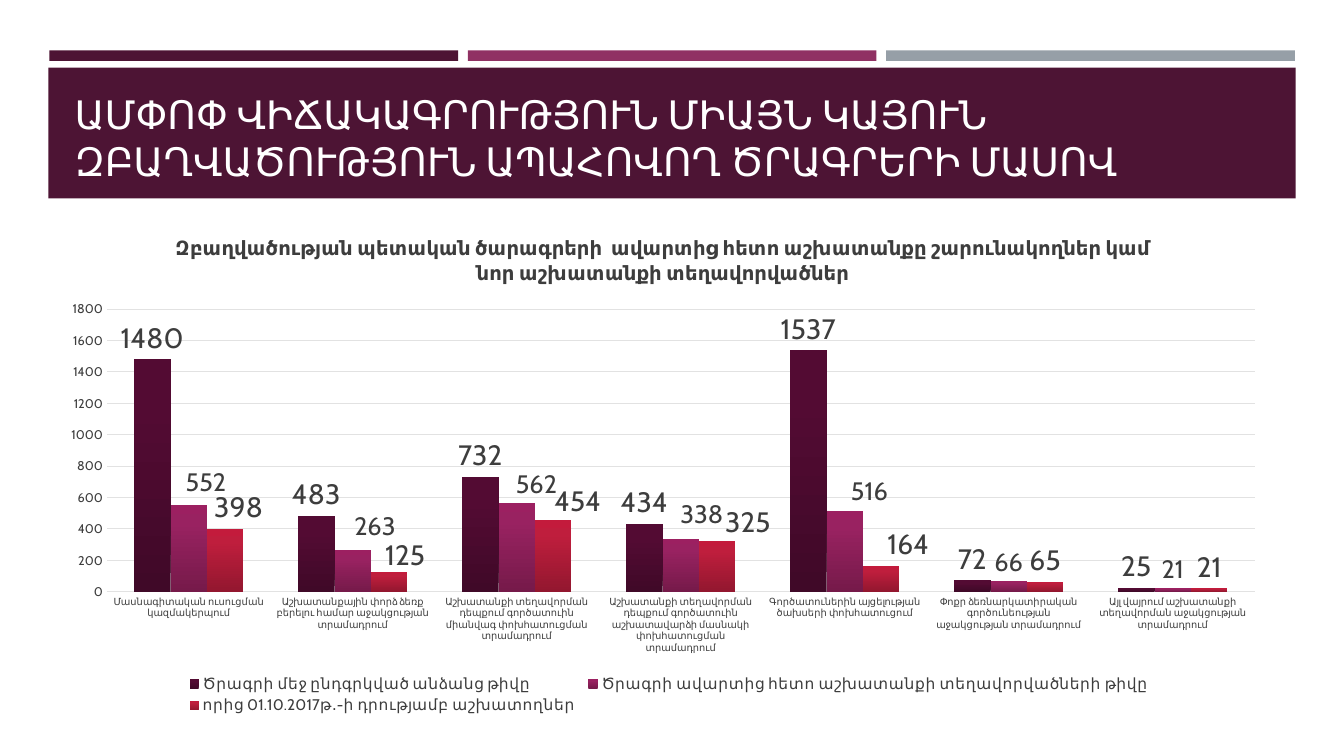
import lxml.etree
import pptx
import pptx.chart.data
import pptx.dml.color
import pptx.enum.chart
import pptx.enum.shapes
import pptx.enum.text
import pptx.oxml.ns
import pptx.util

qn = pptx.oxml.ns.qn
Pt = pptx.util.Pt

COLORS = {
    "plum": "4D1434", "magenta": "903163", "grey": "969FA7",
    "white": "FFFFFF", "text": "3D3D3D", "grid": "E2E2E2",
}
FONT = "Cabin"

TITLE = "ԱՄՓՈՓ ՎԻՃԱԿԱԳՐՈՒԹՅՈՒՆ ՄԻԱՅՆ ԿԱՅՈՒՆ ԶԲԱՂՎԱԾՈՒԹՅՈՒՆ ԱՊԱՀՈՎՈՂ ԾՐԱԳՐԵՐԻ ՄԱՍՈՎ"
CHART_TITLE = ("Զբաղվածության պետական ծարագրերի  ավարտից հետո աշխատանքը "
               "շարունակողներ կամ նոր աշխատանքի տեղավորվածներ")
PROGRAMS = [
    "Մասնագիտական ուսուցման կազմակերպում",
    "Աշխատանքային փորձ ձեռք բերելու համար աջակցության տրամադրում",
    "Աշխատանքի տեղավորման դեպքում գործատուին միանվագ փոխհատուցման տրամադրում",
    "Աշխատանքի տեղավորման դեպքում գործատուին աշխատավարձի մասնակի փոխհատուցման տրամադրում",
    "Գործատուներին այցելության ծախսերի փոխհատուցում",
    "Փոքր ձեռնարկատիրական գործունեության աջակցության տրամադրում",
    "Այլ վայրում աշխատանքի տեղավորման աջակցության տրամադրում",
]
# Label shifts are (x, y) in percent of the chart, one per leading program.
SERIES = [
    {"name": "Ծրագրի մեջ ընդգրկված անձանց թիվը",
     "values": [1480, 483, 732, 434, 1537, 72, 25],
     "gradient": ["400928", "530B33", "550A34"], "label_size": 20, "shifts": []},
    {"name": "Ծրագրի ավարտից հետո աշխատանքի տեղավորվածների թիվը",
     "values": [552, 263, 562, 338, 516, 66, 21],
     "gradient": ["761A4A", "992261", "9C2061"], "label_size": 18,
     "shifts": [(1.4, -0.6), (1.8, -1), (1.6, 0), (1.7, -1), (2, 0)]},
    {"name": "որից 01.10.2017թ․-ի դրությամբ աշխատողներ",
     "values": [398, 125, 454, 325, 164, 65, 21],
     "gradient": ["93172F", "BF1E3D", "C31B3C"], "label_size": 20,
     "shifts": [(1.1, 0), (1.3, 1), (2, 0.4), (2.5, 0.6), (2.2, 0)]},
]


def rgb(name):
    return pptx.dml.color.RGBColor.from_string(COLORS[name])


def make_layout(**settings):
    """Return a c:layout element; numbers are percent of the chart."""
    layout = lxml.etree.Element(qn("c:layout"))
    manual = lxml.etree.SubElement(layout, qn("c:manualLayout"))
    for tag, value in settings.items():
        text = value if isinstance(value, str) else f"{value / 100:.3f}"
        lxml.etree.SubElement(manual, qn(f"c:{tag}")).set("val", text)
    return layout


def place(element, after, **settings):
    """Give a chart part a manual layout, right after the named child (or first)."""
    for old in element.findall(qn("c:layout")):
        element.remove(old)
    position = 0 if after is None else element.index(element.find(qn(after))) + 1
    element.insert(position, make_layout(**settings))


class SlideBuilder:
    """Boxes are (left, top, width, height) in percent of the slide's size."""

    def __init__(self, presentation):
        self.presentation = presentation
        self.slide = presentation.slides.add_slide(presentation.slide_layouts[5])

    def box(self, left, top, width, height):
        full_width = self.presentation.slide_width
        full_height = self.presentation.slide_height
        return [int(full * share / 100) for full, share in
                zip((full_width, full_height) * 2, (left, top, width, height))]

    def style(self, font, size, color="text", bold=False):
        font.name, font.size, font.bold = FONT, Pt(size), bold
        font.color.rgb = rgb(color)

    def bar(self, box, color):
        shape = self.slide.shapes.add_shape(
            pptx.enum.shapes.MSO_SHAPE.RECTANGLE, *self.box(*box))
        shape.shadow.inherit = False
        shape.fill.solid()
        shape.fill.fore_color.rgb = rgb(color)
        shape.line.fill.background()

    def title(self, box, text):
        title = self.slide.shapes.title
        title.left, title.top, title.width, title.height = self.box(*box)
        frame = title.text_frame
        frame.text = text
        frame.word_wrap = True
        frame.auto_size = pptx.enum.text.MSO_AUTO_SIZE.NONE
        frame.vertical_anchor = pptx.enum.text.MSO_ANCHOR.BOTTOM
        paragraph = frame.paragraphs[0]
        paragraph.alignment = pptx.enum.text.PP_ALIGN.LEFT
        self.style(paragraph.font, 28, "white")
        self.slide.shapes._spTree.append(title._element)  # in front of the band

    def column_chart(self, box):
        data = pptx.chart.data.CategoryChartData()
        data.categories = PROGRAMS
        for entry in SERIES:
            data.add_series(entry["name"], entry["values"])
        chart = self.slide.shapes.add_chart(
            pptx.enum.chart.XL_CHART_TYPE.COLUMN_CLUSTERED, *self.box(*box), data).chart
        self.style(chart.font, 10)
        chart.has_title = True
        chart.chart_title.text_frame.text = CHART_TITLE
        self.style(chart.chart_title.text_frame.paragraphs[0].font, 14, bold=True)
        chart.chart_title.include_in_layout = False

        chart.has_legend = True
        chart.legend.position = pptx.enum.chart.XL_LEGEND_POSITION.BOTTOM
        chart.legend.include_in_layout = False
        self.style(chart.legend.font, 11)
        place(chart.legend._element, "c:legendPos", xMode="edge", yMode="edge",
              x=11, y=90.3, w=79, h=9.2)

        self.axes(chart)
        plot = chart.plots[0]
        plot.gap_width, plot.overlap, plot.vary_by_categories = 150, 0, False
        for series, entry in zip(plot.series, SERIES):
            self.series(series, entry)
        plot_area = chart._chartSpace.find(".//" + qn("c:plotArea"))
        place(plot_area, None, layoutTarget="inner", xMode="edge", yMode="edge",
              x=4.9, y=18.5, w=93.1, h=56)

    def axes(self, chart):
        for axis, size in ((chart.category_axis, 7), (chart.value_axis, 9)):
            axis.major_tick_mark = pptx.enum.chart.XL_TICK_MARK.NONE
            axis.minor_tick_mark = pptx.enum.chart.XL_TICK_MARK.NONE
            self.style(axis.tick_labels.font, size)
        value_axis = chart.value_axis
        value_axis.minimum_scale, value_axis.maximum_scale = 0, 1800
        value_axis.major_unit = 200
        value_axis.format.line.fill.background()
        for line in (chart.category_axis.format.line,
                     value_axis.major_gridlines.format.line):
            line.color.rgb = rgb("grid")
            line.width = Pt(0.75)

    def series(self, series, entry):
        series.smooth = False if hasattr(series, "smooth") else None
        fill = series.format.fill
        fill.gradient()
        fill.gradient_angle = 90
        stops = next(series._element.iter(qn("a:gsLst")))
        stops.clear()
        for position, color in zip((0, 80, 100), entry["gradient"]):
            stop = lxml.etree.SubElement(stops, qn("a:gs"), pos=str(position * 1000))
            lxml.etree.SubElement(stop, qn("a:srgbClr"), val=color)

        outside = pptx.enum.chart.XL_LABEL_POSITION.OUTSIDE_END
        labels = series.data_labels
        labels.show_value = True
        labels.position = outside
        self.style(labels.font, entry["label_size"])
        for index, (x, y) in enumerate(entry["shifts"]):
            label = series.points[index].data_label
            label.position = outside
            self.style(label.font, entry["label_size"])
            element = series._element.findall(".//" + qn("c:dLbl"))[index]
            place(element, "c:idx", x=x, y=y)


def main():
    presentation = pptx.Presentation()
    presentation.slide_width = pptx.util.Inches(13.33)
    presentation.slide_height = pptx.util.Inches(7.5)
    builder = SlideBuilder(presentation)
    for column, color in enumerate(("plum", "magenta", "grey")):
        builder.bar((3.68 + column * 31.13, 6.67, 30.4, 1.4), color)
    builder.bar((3.6, 8.93, 92.8, 17.33), "plum")
    builder.title((4.8, 10.27, 90.47, 14.8), TITLE)
    builder.column_chart((3.45, 28.53, 91.75, 66.8))
    presentation.save("out.pptx")


if __name__ == "__main__":
    main()
